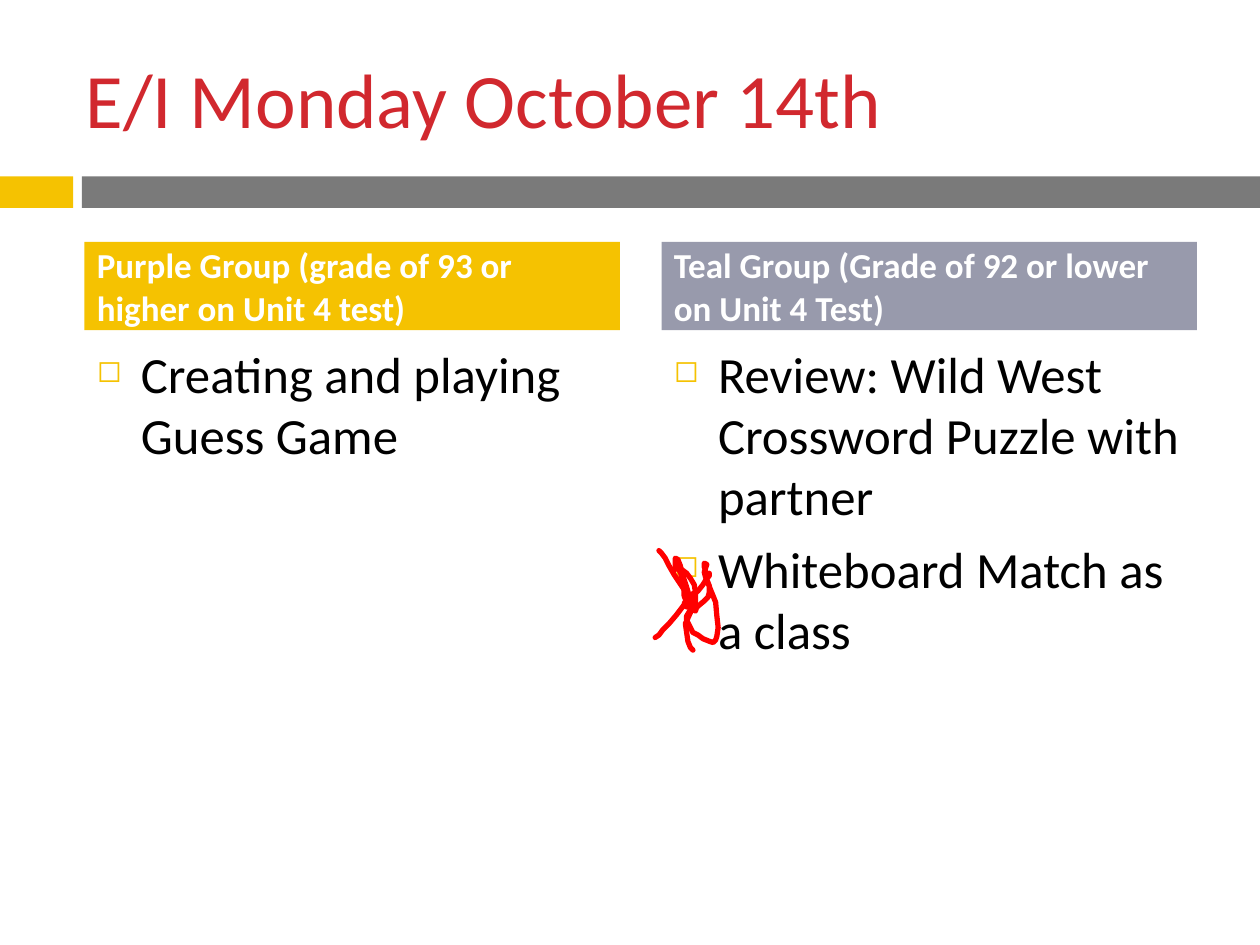
from lxml.etree import SubElement
from pptx import Presentation
from pptx.dml.color import RGBColor
from pptx.enum.shapes import MSO_SHAPE
from pptx.enum.text import MSO_ANCHOR, PP_ALIGN
from pptx.oxml.ns import qn
from pptx.util import Inches, Pt

FONT = "Calibri"
RED = RGBColor(0xD1, 0x28, 0x2E)
GOLD = RGBColor(0xF5, 0xC2, 0x01)
GRAY = RGBColor(0x7A, 0x7A, 0x7A)
SLATE = RGBColor(0x98, 0x9A, 0xAC)
WHITE = RGBColor(0xFF, 0xFF, 0xFF)
BLACK = RGBColor(0, 0, 0)
INK = RGBColor(0xFF, 0, 0)

# Left edge, header colour, header and bullets of each group
COLUMNS = [
    (0.67, GOLD, "Purple Group (grade of 93 or higher on Unit 4 test)",
     ["Creating and playing Guess Game"]),
    (5.25, SLATE, "Teal Group (Grade of 92 or lower on Unit 4 Test)",
     ["Review: Wild West Crossword Puzzle with partner",
      "Whiteboard Match as a class"]),
]
COLUMN_WIDTH = 4.25

# Pen strokes, in hundredths of an inch
STROKES = [
    [(563, 455), (563, 457), (561, 459), (558, 464), (554, 469), (548, 474),
     (543, 480), (537, 488), (531, 495), (526, 500), (523, 504), (520, 506)],
    [(547, 473), (545, 471), (543, 468), (539, 462), (535, 456), (531, 449),
     (528, 443), (525, 439), (523, 437)],
    [(544, 472), (547, 476), (548, 480), (548, 484), (545, 489), (545, 492),
     (548, 498), (550, 502), (554, 504), (558, 507), (563, 509), (566, 510),
     (568, 508), (569, 505), (570, 498), (569, 489), (568, 478), (564, 468),
     (560, 458), (559, 454), (561, 448), (559, 447), (559, 450), (561, 456),
     (561, 460), (563, 465), (563, 470), (562, 474), (559, 477), (553, 482),
     (552, 485), (550, 484), (548, 480), (548, 476), (545, 466), (542, 457),
     (540, 449), (538, 444), (536, 443), (536, 452)],
    [(552, 470), (547, 473), (543, 479), (545, 482), (545, 478), (543, 473),
     (543, 469), (542, 461), (540, 454), (538, 451), (541, 452), (545, 455),
     (548, 459), (551, 464), (552, 470), (552, 480), (549, 484), (544, 495),
     (545, 502), (546, 509), (548, 514), (550, 516)],
]


def add_run(p, text, size, color, bold=False):
    r = p.add_run()
    r.text = text
    r.font.name = FONT
    r.font.size = Pt(size)
    r.font.bold = bold
    r.font.color.rgb = color


def add_bar(s, x, y, w, h, color):
    sp = s.shapes.add_shape(MSO_SHAPE.RECTANGLE, Inches(x), Inches(y),
                            Inches(w), Inches(h))
    sp.shadow.inherit = False
    sp.fill.solid()
    sp.fill.fore_color.rgb = color
    sp.line.fill.background()
    return sp


def add_title(s, text):
    title = s.shapes.title
    title.left, title.top = Inches(0.58), Inches(0.3)
    title.width, title.height = Inches(8.92), Inches(0.95)
    title.text_frame.vertical_anchor = MSO_ANCHOR.MIDDLE
    p = title.text_frame.paragraphs[0]
    p.alignment = PP_ALIGN.LEFT
    add_run(p, text, 44, RED)


def add_header(s, x, color, text):
    tf = add_bar(s, x, 1.92, COLUMN_WIDTH, 0.7, color).text_frame
    tf.word_wrap = True
    tf.vertical_anchor = MSO_ANCHOR.MIDDLE
    p = tf.paragraphs[0]
    p.alignment = PP_ALIGN.LEFT
    p.space_before = Pt(7)
    add_run(p, text, 20, WHITE, bold=True)


def set_bullet(p):
    pPr = p._p.get_or_add_pPr()
    pPr.set("marL", str(Inches(0.35)))
    pPr.set("indent", str(-Inches(0.35)))
    color = SubElement(pPr, qn("a:buClr"))
    SubElement(color, qn("a:srgbClr"), val=str(GOLD))
    SubElement(pPr, qn("a:buSzPct"), val="60000")
    SubElement(pPr, qn("a:buChar"), char="◻")


def add_bullets(s, x, items):
    box = s.shapes.add_textbox(Inches(x), Inches(2.67),
                               Inches(COLUMN_WIDTH), Inches(3.92))
    tf = box.text_frame
    tf.word_wrap = True
    for i, item in enumerate(items):
        p = tf.add_paragraph() if i else tf.paragraphs[0]
        p.space_before = Pt(7)
        set_bullet(p)
        add_run(p, item, 29, BLACK)


def add_stroke(s, points):
    builder = s.shapes.build_freeform(*points[0], scale=Inches(0.01))
    builder.add_line_segments(points[1:], close=False)
    sp = builder.convert_to_shape()
    sp.shadow.inherit = False
    sp.fill.background()
    sp.line.color.rgb = INK
    sp.line.width = Pt(3)
    # Rounded pen tip
    ln = sp.line._get_or_add_ln()
    ln.set("cap", "rnd")
    SubElement(ln, qn("a:round"))


def main():
    prs = Presentation()
    prs.slide_width, prs.slide_height = Inches(10), Inches(7.5)
    s = prs.slides.add_slide(prs.slide_layouts[5])

    # Title and the band below it
    add_bar(s, 0, 1.4, 0.58, 0.25, GOLD)
    add_bar(s, 0.65, 1.4, 9.35, 0.25, GRAY)
    add_title(s, "E/I Monday October 14th")

    # The two groups
    for x, color, header, items in COLUMNS:
        add_bullets(s, x, items)
        add_header(s, x, color, header)

    # Pen marks over the last bullet
    for points in STROKES:
        add_stroke(s, points)

    prs.save("out.pptx")


if __name__ == "__main__":
    main()
